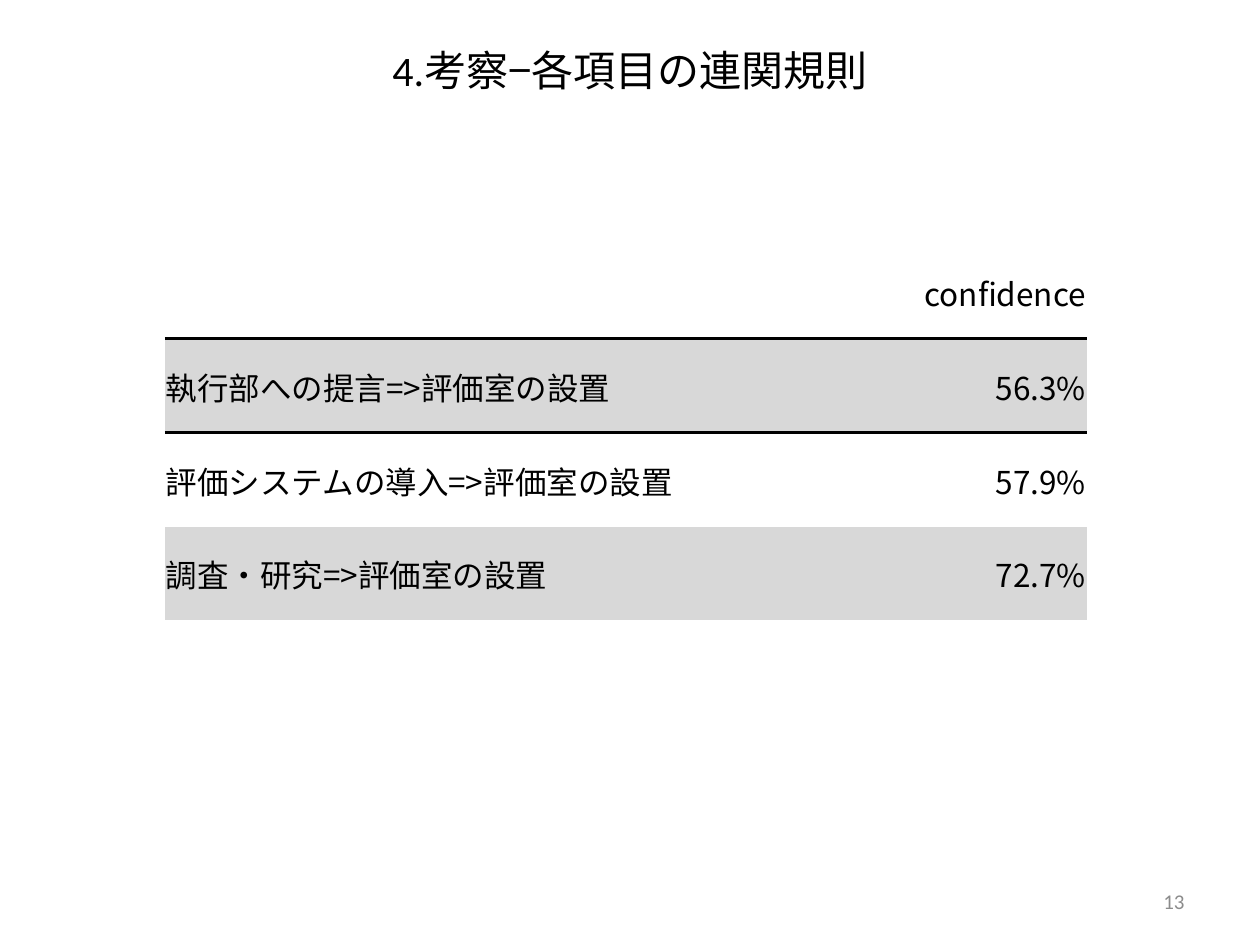
from dataclasses import dataclass

from lxml.etree import SubElement
from pptx import Presentation
from pptx.dml.color import RGBColor
from pptx.enum.text import MSO_ANCHOR, PP_ALIGN
from pptx.oxml import parse_xml
from pptx.oxml.ns import nsdecls, qn
from pptx.util import Emu, Pt

PIXELS_PER_INCH = 126
COLORS = {"text": "000000", "number": "8C8C8C", "band": "D8D8D8", "rule": "000000"}
CJK_FONT = "Noto Sans CJK JP"
LATIN_FONT = "Calibri"
NO_STYLE_NO_GRID = "{2D5ABB26-0587-4C30-8999-92F81FD0307C}"


@dataclass
class Label:
    text: str
    left: int
    top: int
    width: int
    height: int
    size: int
    color: str
    alignment: PP_ALIGN


@dataclass
class Rule:
    name: str
    confidence: str


LABELS = [
    Label("13", 903, 876, 294, 50, 12, "number", PP_ALIGN.RIGHT),
    Label("4.考察−各項目の連関規則", 63, 38, 1134, 63, 24, "text", PP_ALIGN.CENTER),
]
RULES = [
    Rule("", "confidence"),
    Rule("執行部への提言=>評価室の設置", "56.3%"),
    Rule("評価システムの導入=>評価室の設置", "57.9%"),
    Rule("調査・研究=>評価室の設置", "72.7%"),
]
TABLE_LEFT, TABLE_TOP = 165, 245
COLUMN_WIDTHS = [703, 219]
ROW_HEIGHTS = [94, 94, 94, 93]


def px(pixels: int) -> Emu:
    return Emu(round(pixels * 914400 / PIXELS_PER_INCH))


def set_text(text_frame, text: str, size: int, font: str, color: str, alignment: PP_ALIGN) -> None:
    text_frame.text = text
    paragraph = text_frame.paragraphs[0]
    paragraph.alignment = alignment
    for run in paragraph.runs:
        run.font.size = Pt(size)
        run.font.color.rgb = RGBColor.from_string(COLORS[color])
        run.font.name = font
        SubElement(run.font._element, qn("a:ea"), typeface=CJK_FONT)


def add_label(slide, label: Label) -> None:
    shape = slide.shapes.add_textbox(px(label.left), px(label.top), px(label.width), px(label.height))
    shape.text_frame.word_wrap = True
    shape.text_frame.vertical_anchor = MSO_ANCHOR.MIDDLE
    set_text(shape.text_frame, label.text, label.size, LATIN_FONT, label.color, label.alignment)


def add_border(cell, side: str) -> None:
    border = parse_xml(
        f'<a:{side} {nsdecls("a")} w="{Pt(2)}"><a:solidFill>'
        f'<a:srgbClr val="{COLORS["rule"]}"/></a:solidFill></a:{side}>'
    )
    cell._tc.get_or_add_tcPr().insert(0, border)


def format_cell(cell, text: str, row: int, alignment: PP_ALIGN) -> None:
    cell.margin_left = cell.margin_right = cell.margin_top = px(1)
    cell.margin_bottom = 0
    cell.vertical_anchor = MSO_ANCHOR.MIDDLE
    set_text(cell.text_frame, text, 18, CJK_FONT, "text", alignment)
    # Odd rows are banded
    if row % 2:
        cell.fill.solid()
        cell.fill.fore_color.rgb = RGBColor.from_string(COLORS["band"])
    else:
        cell.fill.background()
    # One line between the header and the body
    if row < 2:
        add_border(cell, ("lnB", "lnT")[row])


def add_rule_table(slide, rules: list[Rule]) -> None:
    table = slide.shapes.add_table(
        len(rules), len(COLUMN_WIDTHS), px(TABLE_LEFT), px(TABLE_TOP),
        px(sum(COLUMN_WIDTHS)), px(sum(ROW_HEIGHTS)),
    ).table
    table.first_row = table.horz_banding = False
    table._tbl.tblPr.find(qn("a:tableStyleId")).text = NO_STYLE_NO_GRID
    for column, width in zip(table.columns, COLUMN_WIDTHS):
        column.width = px(width)
    for row, (rule, height) in enumerate(zip(rules, ROW_HEIGHTS)):
        table.rows[row].height = px(height)
        format_cell(table.cell(row, 0), rule.name, row, PP_ALIGN.LEFT)
        format_cell(table.cell(row, 1), rule.confidence, row, PP_ALIGN.RIGHT)


def main() -> None:
    presentation = Presentation()
    presentation.slide_width, presentation.slide_height = px(1260), px(945)
    slide = presentation.slides.add_slide(presentation.slide_layouts[6])

    # Association rules
    add_rule_table(slide, RULES)

    # Page number and title
    for label in LABELS:
        add_label(slide, label)

    presentation.save("out.pptx")


if __name__ == "__main__":
    main()
